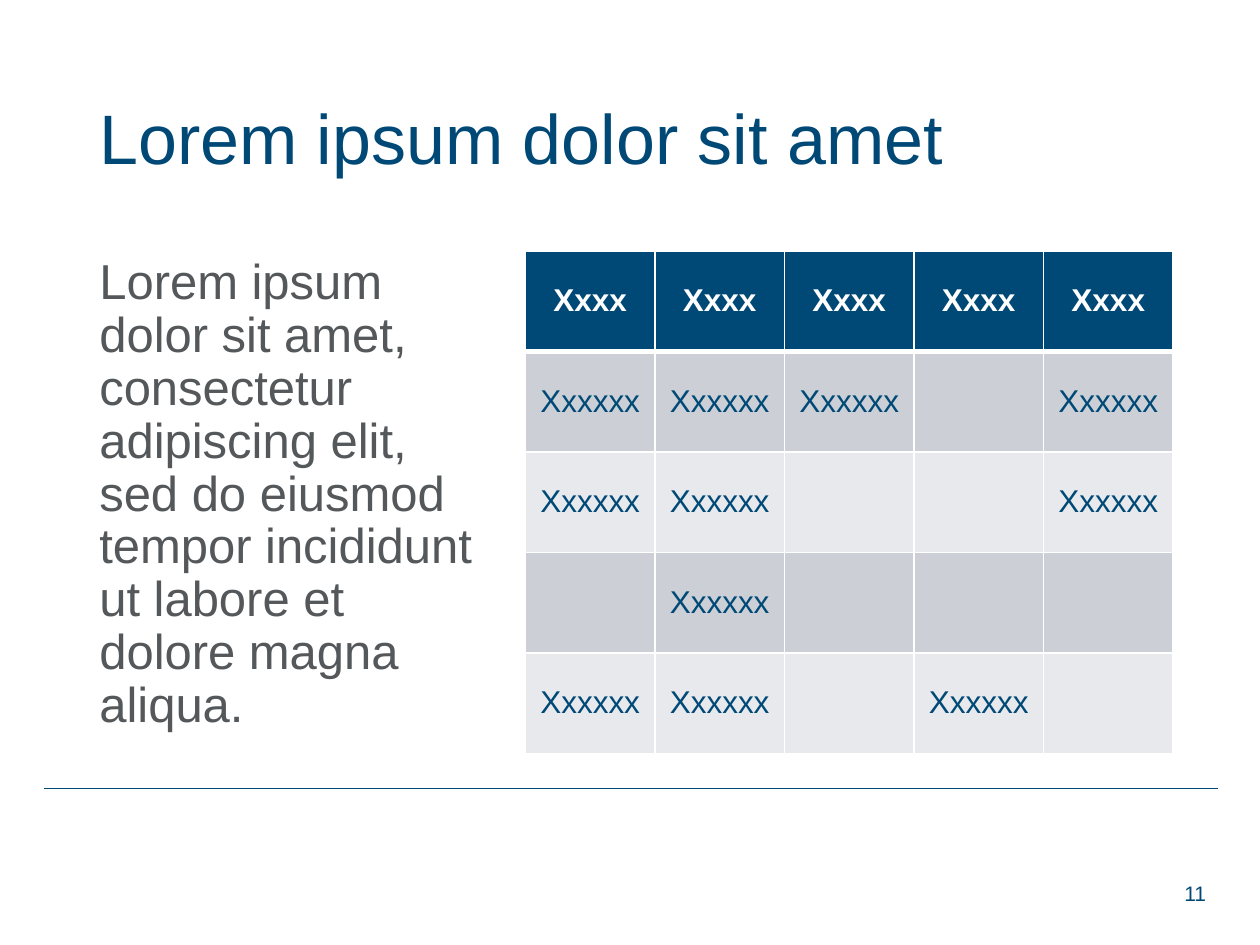
from dataclasses import dataclass

from lxml.etree import SubElement
from pptx import Presentation
from pptx.dml.color import RGBColor as RGB
from pptx.enum.shapes import MSO_CONNECTOR as Connector
from pptx.enum.text import MSO_ANCHOR as Anchor, PP_ALIGN as Align
from pptx.oxml.ns import qn
from pptx.util import Inches, Pt


@dataclass(frozen=True)
class Theme:
    font: str = "Arial"
    navy: RGB = RGB(0x00, 0x49, 0x76)
    gray: RGB = RGB(0x54, 0x58, 0x5A)
    white: RGB = RGB(0xFF, 0xFF, 0xFF)
    bands: tuple = (RGB(0xCC, 0xD0, 0xD6), RGB(0xE7, 0xE9, 0xEC))
    title_size: int = 40
    body_size: int = 28
    table_size: int = 18
    number_size: int = 12
    rule_width: float = 0.5
    border_width: float = 1
    header_border_width: float = 3


class SlideBuilder:
    def __init__(self, slide, theme):
        self.slide = slide
        self.theme = theme

    def style(self, paragraph, size, color, align=Align.LEFT, bold=False):
        paragraph.alignment = align
        font = paragraph.font
        font.name, font.size, font.bold = self.theme.font, Pt(size), bold
        font.color.rgb = color

    def text(self, words, box, size, color, anchor=Anchor.MIDDLE,
             align=Align.LEFT, line_spacing=1.0, space_before=0):
        frame = self.slide.shapes.add_textbox(*map(Inches, box)).text_frame
        frame.word_wrap = True
        frame.vertical_anchor = anchor
        paragraph = frame.paragraphs[0]
        paragraph.text = words
        paragraph.line_spacing = line_spacing
        paragraph.space_before = Pt(space_before)
        self.style(paragraph, size, color, align)

    def rule(self, left, right, y):
        line = self.slide.shapes.add_connector(
            Connector.STRAIGHT, Inches(left), Inches(y), Inches(right), Inches(y))
        line.line.color.rgb = self.theme.navy
        line.line.width = Pt(self.theme.rule_width)
        SubElement(line.element.spPr, qn("a:effectLst"))

    def table(self, rows, box):
        table = self.slide.shapes.add_table(
            len(rows), len(rows[0]), *map(Inches, box)).table
        for r, row in enumerate(rows):
            for c, words in enumerate(row):
                self.cell(table.cell(r, c), words, r)

    def cell(self, cell, words, row):
        theme = self.theme
        header = row == 0
        cell.fill.solid()
        cell.fill.fore_color.rgb = (
            theme.navy if header else theme.bands[(row - 1) % 2])
        cell.vertical_anchor = Anchor.MIDDLE
        cell.margin_left = cell.margin_right = Inches(0.05)
        cell.margin_top = cell.margin_bottom = Inches(0.05)
        paragraph = cell.text_frame.paragraphs[0]
        paragraph.text = words
        self.style(paragraph, theme.table_size,
                   theme.white if header else theme.navy, Align.CENTER, header)
        thin, thick = theme.border_width, theme.header_border_width
        self.borders(cell, {"L": thin, "R": thin,
                            "T": thick if row == 1 else thin,
                            "B": thick if header else thin})

    def borders(self, cell, widths):
        """Borders must come before the fill in the cell properties."""
        properties = cell._tc.get_or_add_tcPr()
        for position, (side, width) in enumerate(widths.items()):
            border = SubElement(properties, qn(f"a:ln{side}"), w=str(Pt(width)))
            fill = SubElement(border, qn("a:solidFill"))
            SubElement(fill, qn("a:srgbClr"), val=str(self.theme.white))
            properties.insert(position, border)


def main():
    presentation = Presentation()
    presentation.slide_width, presentation.slide_height = Inches(10), Inches(7.5)
    theme = Theme()
    builder = SlideBuilder(
        presentation.slides.add_slide(presentation.slide_layouts[6]), theme)

    builder.rule(0.35, 9.67, 6.26)
    builder.text("11", (7.42, 6.89, 2.25, 0.4), theme.number_size, theme.navy,
                 align=Align.RIGHT)
    builder.text("Lorem ipsum dolor sit amet, consectetur adipiscing elit, "
                 "sed do eiusmod tempor incididunt ut labore et dolore magna "
                 "aliqua.", (0.69, 1.99, 3.17, 3.99), theme.body_size, theme.gray,
                 anchor=Anchor.TOP, line_spacing=0.9, space_before=10)
    builder.text("Lorem ipsum dolor sit amet", (0.69, 0.4, 8.62, 1.45),
                 theme.title_size, theme.navy, line_spacing=0.9)

    header, entry = "Xxxx", "Xxxxxx"
    builder.table([
        [header] * 5,
        [entry, entry, entry, "", entry],
        [entry, entry, "", "", entry],
        ["", entry, "", "", ""],
        [entry, entry, "", entry, ""],
    ], (4.17, 1.99, 5.14, 3.99))

    presentation.save("out.pptx")


if __name__ == "__main__":
    main()
